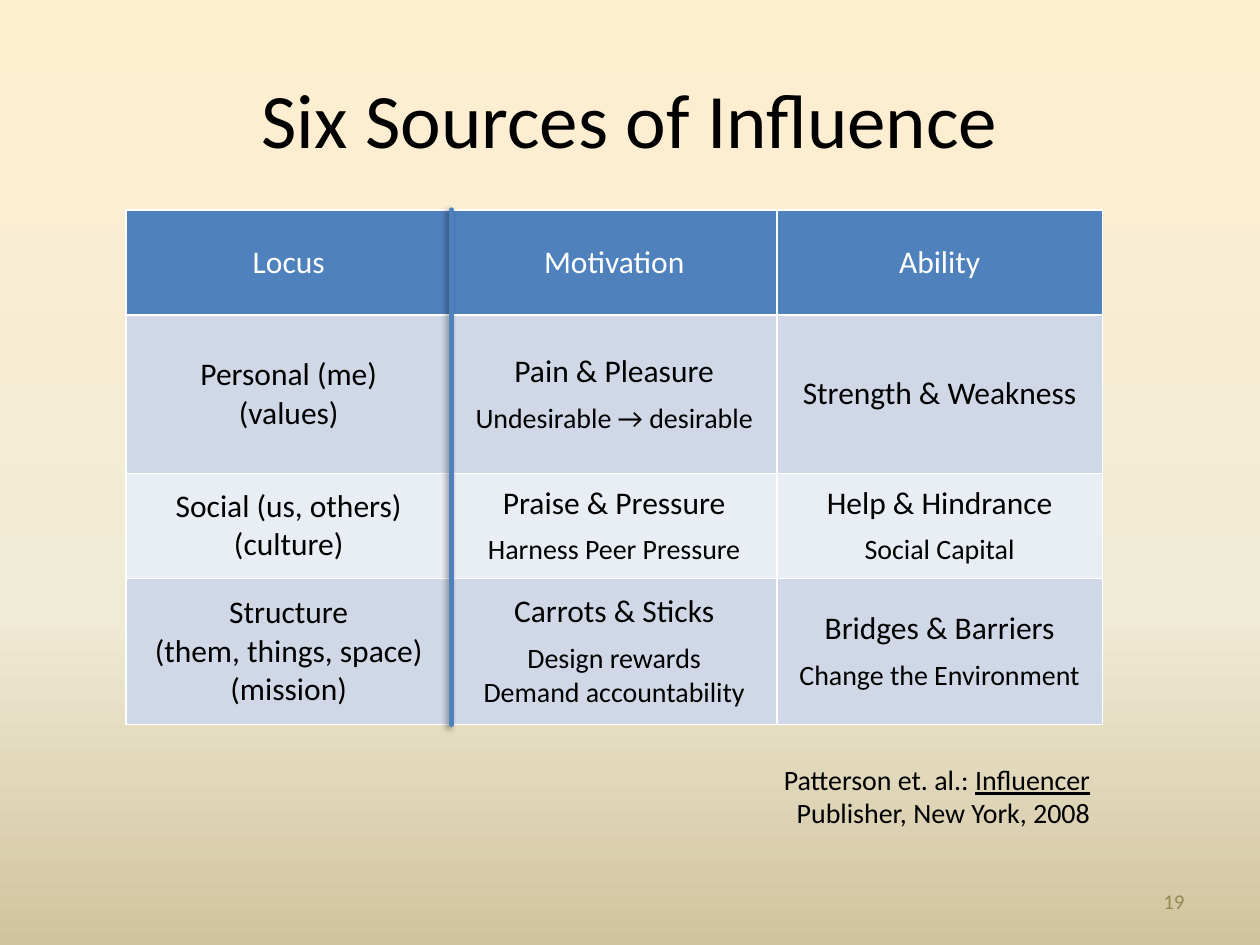
from copy import deepcopy

from lxml import etree
from pptx import Presentation
from pptx.dml.color import RGBColor
from pptx.enum import shapes, text
from pptx.oxml import ns
from pptx.util import Pt

BLACK = RGBColor(0x00, 0x00, 0x00)
WHITE = RGBColor(0xFF, 0xFF, 0xFF)
BLUE = RGBColor(0x4F, 0x81, 0xBD)
BAND_DARK = RGBColor(0xD0, 0xD8, 0xE8)
BAND_LIGHT = RGBColor(0xE9, 0xED, 0xF4)
OLIVE = RGBColor(0x94, 0x8A, 0x54)
BACKDROP = [
    (0, RGBColor(0xFF, 0xEF, 0xD1)),
    (0.65, RGBColor(0xF0, 0xEB, 0xD5)),
    (1, RGBColor(0xD1, 0xC3, 0x9F)),
]
FONT = "Calibri"
ROW_HEIGHTS = [60, 90.5, 60, 83.5]
ROW_FILLS = [BLUE, BAND_DARK, BAND_LIGHT, BAND_DARK]

CELLS = [
    [(["Locus"], []), (["Motivation"], []), (["Ability"], [])],
    [
        (["Personal (me)", "(values)"], []),
        (["Pain & Pleasure"], ["Undesirable → desirable"]),
        (["Strength & Weakness"], []),
    ],
    [
        (["Social (us, others)", "(culture)"], []),
        (["Praise & Pressure"], ["Harness Peer Pressure"]),
        (["Help & Hindrance"], ["Social Capital"]),
    ],
    [
        (["Structure", "(them, things, space)", "(mission)"], []),
        (["Carrots & Sticks"], ["Design rewards", "Demand accountability"]),
        (["Bridges & Barriers"], ["Change the Environment"]),
    ],
]


def add_run(p, words, size, color, underline=None):
    r = p.add_run()
    r.text = words
    r.font.name = FONT
    r.font.size = Pt(size)
    r.font.bold = False
    r.font.underline = underline
    r.font.color.rgb = color


def add_paragraph(tf, first, align):
    p = tf.paragraphs[0] if first else tf.add_paragraph()
    p.alignment = align
    return p


def add_text(s, box, lines, size, color, align, anchor):
    tf = s.shapes.add_textbox(*map(Pt, box)).text_frame
    tf.word_wrap = True
    tf.vertical_anchor = anchor
    for i, runs in enumerate(lines):
        p = add_paragraph(tf, i == 0, align)
        for words, underline in runs:
            add_run(p, words, size, color, underline)


def paint_background(s):
    fill = s.background.fill
    fill.gradient()
    fill.gradient_angle = 270
    stop_list = s.element.find(".//" + ns.qn("a:gsLst"))
    stop_list.append(deepcopy(stop_list[-1]))
    for stop, (position, color) in zip(fill.gradient_stops, BACKDROP):
        stop.position = position
        stop.color.rgb = color


def set_borders(cell):
    props = cell._tc.get_or_add_tcPr()
    for i, side in enumerate(("lnL", "lnR", "lnT", "lnB")):
        ln = etree.Element(ns.qn("a:" + side), w=str(Pt(1)))
        fill = etree.SubElement(ln, ns.qn("a:solidFill"))
        etree.SubElement(fill, ns.qn("a:srgbClr"), val=str(WHITE))
        props.insert(i, ln)


def fill_cell(cell, main, details, fill, color):
    cell.fill.solid()
    cell.fill.fore_color.rgb = fill
    cell.vertical_anchor = text.MSO_ANCHOR.MIDDLE
    set_borders(cell)
    for i, words in enumerate(main + details):
        p = add_paragraph(cell.text_frame, i == 0, text.PP_ALIGN.CENTER)
        if i == len(main):
            p.space_before = Pt(6)
        add_run(p, words, 18 if i < len(main) else 16, color)


def add_divider(s, x, top, bottom):
    line = s.shapes.add_connector(
        shapes.MSO_CONNECTOR.STRAIGHT, Pt(x), Pt(top), Pt(x), Pt(bottom))
    line.line.color.rgb = BLUE
    line.line.width = Pt(3)
    line.line._get_or_add_ln().set("cap", "rnd")
    effects = etree.SubElement(line._element.spPr, ns.qn("a:effectLst"))
    shadow = etree.SubElement(
        effects, ns.qn("a:outerShdw"), blurRad=str(Pt(3.1)),
        dist=str(Pt(2)), dir=str(150 * 60000), rotWithShape="0")
    tint = etree.SubElement(shadow, ns.qn("a:srgbClr"), val=str(BLACK))
    etree.SubElement(tint, ns.qn("a:alpha"), val="35000")


def add_influence_table(s, box):
    left, top, width, height = box
    table = s.shapes.add_table(len(CELLS), len(CELLS[0]), *map(Pt, box)).table
    column_width = width / len(CELLS[0])
    for column in table.columns:
        column.width = Pt(column_width)
    for i, row in enumerate(CELLS):
        table.rows[i].height = Pt(ROW_HEIGHTS[i])
        color = BLACK if i else WHITE
        for j, (main, details) in enumerate(row):
            fill_cell(table.cell(i, j), main, details, ROW_FILLS[i], color)


def build_slide(prs):
    s = prs.slides.add_slide(prs.slide_layouts[6])
    paint_background(s)
    middle, right = text.MSO_ANCHOR.MIDDLE, text.PP_ALIGN.RIGHT
    add_text(s, (36, 36, 648, 62.5), [[("Six Sources of Influence", None)]],
             44, BLACK, text.PP_ALIGN.CENTER, middle)
    add_text(s, (516, 500.5, 168, 28.5), [[("19", None)]],
             12, OLIVE, right, middle)
    left, top, width, height = box = (72, 120, 558, sum(ROW_HEIGHTS))
    add_influence_table(s, box)
    source = [
        [("Patterson et. al.: ", None), ("Influencer", True)],
        [("Publisher, New York, 2008", None)],
    ]
    add_text(s, (378, 432, 252, 46), source, 16, BLACK, right,
             text.MSO_ANCHOR.TOP)
    add_divider(s, left + width / 3, top, top + height)


def main():
    prs = Presentation()
    prs.slide_width, prs.slide_height = Pt(720), Pt(540)
    build_slide(prs)
    prs.save("out.pptx")


if __name__ == "__main__":
    main()
